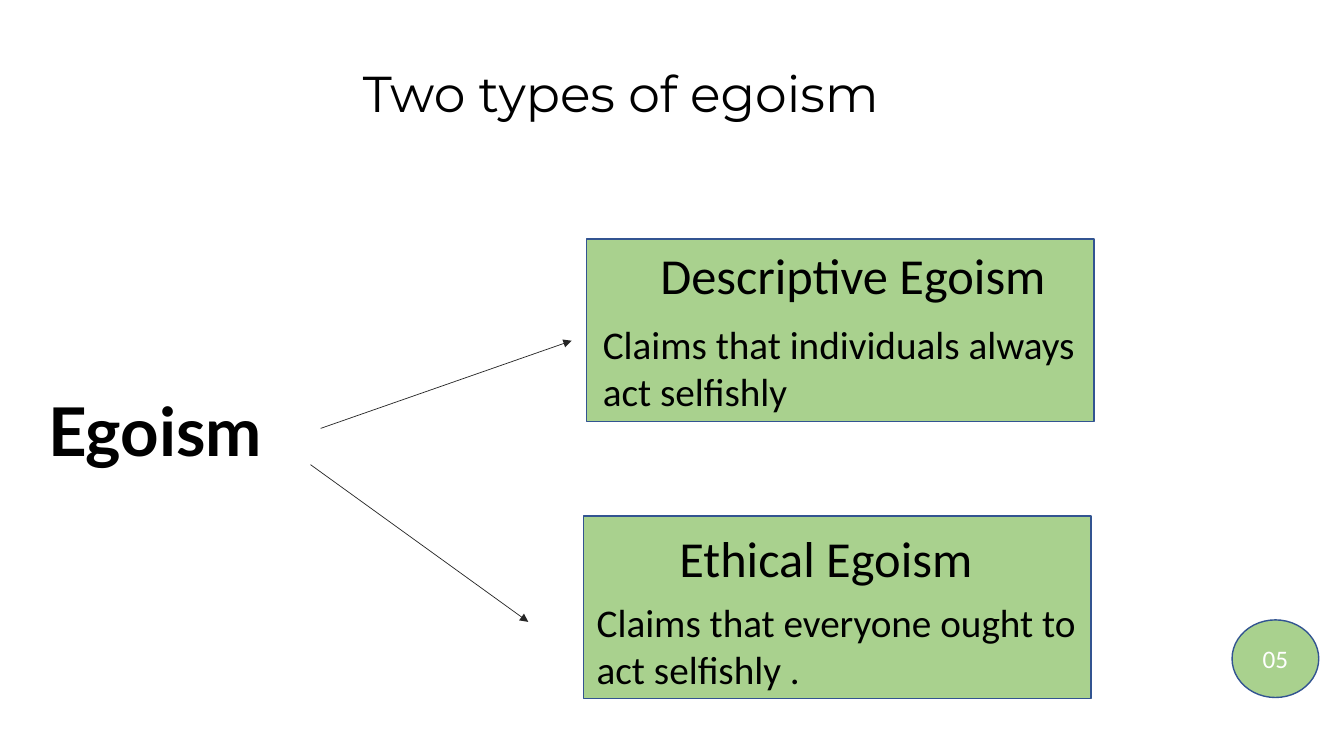
from lxml import etree
from pptx import Presentation
from pptx.dml.color import RGBColor
from pptx.enum import shapes, text
from pptx.oxml.ns import qn
from pptx.util import Inches, Pt

GREEN = RGBColor(0xA9, 0xD1, 0x8E)
BLUE = RGBColor(0x32, 0x54, 0x91)
DARK = RGBColor(0x26, 0x26, 0x26)
BLACK = RGBColor(0, 0, 0)
WHITE = RGBColor(0xFF, 0xFF, 0xFF)

TITLE = ("Two types of egoism", (3.5, 0.57, 6.33, 0.71))
ROOT = ("Egoism", (0.38, 3.81, 2.58, 0.91))
PAGE = ("05", (12.22, 6.15, 0.86, 0.77))
CARD_SIZE = (5.03, 1.81)
# card corner, heading, heading place, claim, claim place, arrow start and end
TYPES = [
    ((5.82, 2.37),
     "Descriptive Egoism", (6.45, 2.37, 4.65, 0.71),
     "Claims that individuals always act selfishly", (5.88, 3.13, 5.29, 1.04),
     (3.18, 4.25, 5.67, 3.38)),
    ((5.79, 5.12),
     "Ethical Egoism", (6.64, 5.18, 3.19, 0.71),
     "Claims that everyone ought to act selfishly .", (5.82, 5.89, 5.03, 1.04),
     (3.08, 4.61, 5.24, 6.17)),
]


def inches(values):
    return [Inches(v) for v in values]


def write(sp, content, size, font="Calibri", color=BLACK, bold=False,
          align=text.PP_ALIGN.LEFT, anchor=text.MSO_ANCHOR.TOP):
    tf = sp.text_frame
    tf.word_wrap = True
    tf.auto_size = text.MSO_AUTO_SIZE.NONE
    tf.vertical_anchor = anchor
    p = tf.paragraphs[0]
    p.alignment = align
    r = p.add_run()
    r.text = content
    r.font.size = Pt(size)
    r.font.name = font
    r.font.bold = bold
    r.font.color.rgb = color


def add_label(s, content, box, size, **fmt):
    write(s.shapes.add_textbox(*inches(box)), content, size, **fmt)


def add_green(s, kind, box):
    sp = s.shapes.add_shape(kind, *inches(box))
    sp.shadow.inherit = False
    sp.fill.solid()
    sp.fill.fore_color.rgb = GREEN
    sp.line.color.rgb = BLUE
    sp.line.width = Pt(1)
    return sp


def add_arrow(s, ends):
    line = s.shapes.add_connector(shapes.MSO_CONNECTOR.STRAIGHT, *inches(ends))
    line.line.color.rgb = DARK
    line.line.width = Pt(0.5)
    sp_pr = line.line._get_or_add_ln().getparent()
    etree.SubElement(sp_pr.find(qn("a:ln")), qn("a:tailEnd"), type="triangle")
    etree.SubElement(sp_pr, qn("a:effectLst"))


def main():
    prs = Presentation()
    prs.slide_width, prs.slide_height = Inches(13.33), Inches(7.5)
    s = prs.slides.add_slide(prs.slide_layouts[5])

    content, box = TITLE
    title = s.shapes.title
    title.left, title.top, title.width, title.height = inches(box)
    write(title, content, 36, font="Montserrat")
    add_label(s, *ROOT, 48, font="Lato", bold=True)

    for corner, heading, heading_box, claim, claim_box, ends in TYPES:
        add_green(s, shapes.MSO_SHAPE.RECTANGLE, corner + CARD_SIZE)
        add_label(s, heading, heading_box, 36)
        add_label(s, claim, claim_box, 28)
        add_arrow(s, ends)

    content, box = PAGE
    write(add_green(s, shapes.MSO_SHAPE.OVAL, box), content, 18, color=WHITE,
          align=text.PP_ALIGN.CENTER, anchor=text.MSO_ANCHOR.MIDDLE)
    prs.save("out.pptx")


if __name__ == "__main__":
    main()
